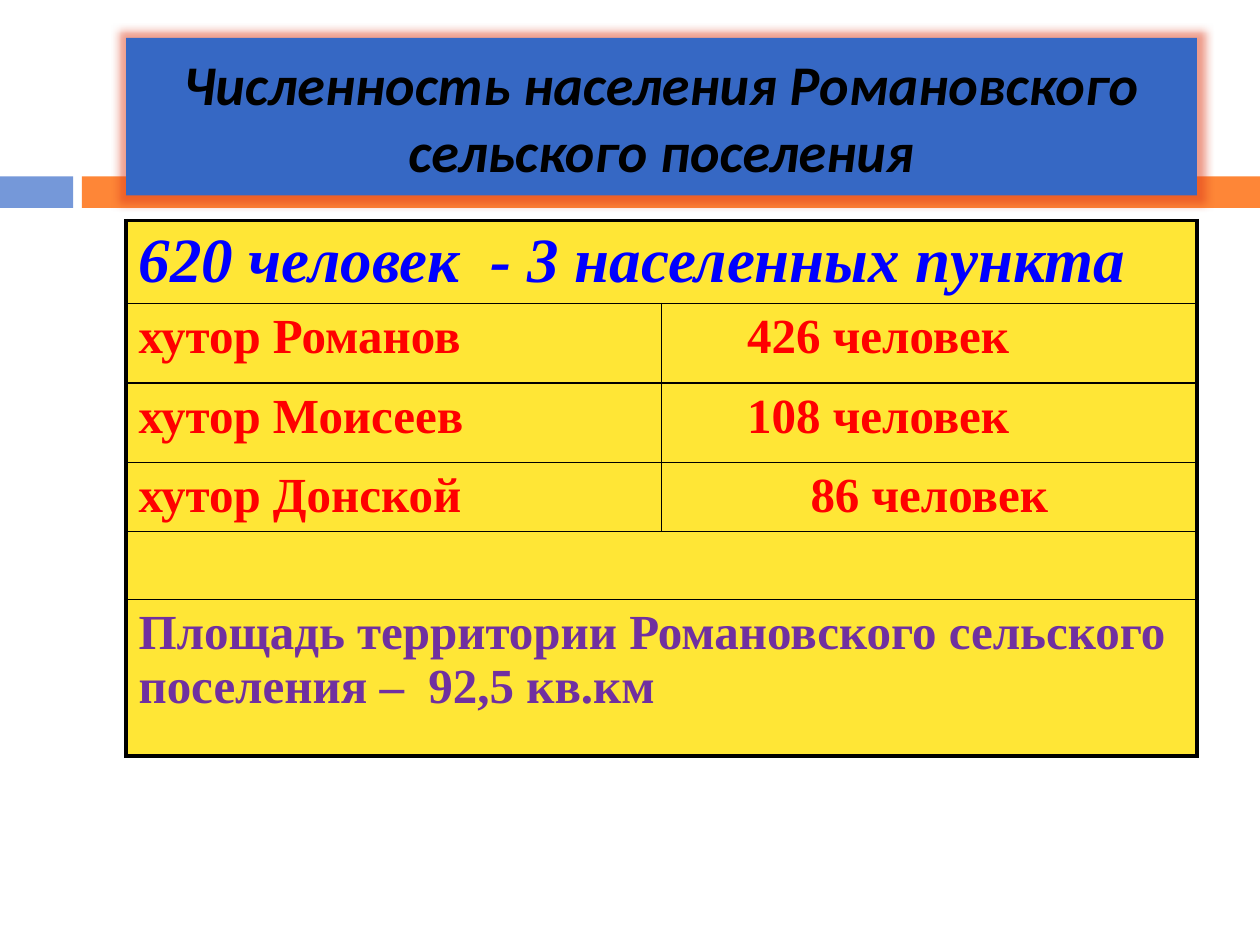
from typing import NamedTuple

from lxml.etree import SubElement
from pptx import Presentation
from pptx.dml.color import RGBColor
from pptx.enum.shapes import MSO_SHAPE
from pptx.enum.text import MSO_ANCHOR, MSO_AUTO_SIZE, PP_ALIGN
from pptx.oxml import parse_xml
from pptx.oxml.ns import nsdecls, qn
from pptx.util import Inches, Pt

COLORS = {
    "blue_band": "7598D9",
    "orange_band": "FE8637",
    "title_fill": "3668C4",
    "glow": "DD3B1A",
    "cell": "FFE636",
    "black": "000000",
    "total": "0000FF",
    "village": "FF0000",
    "area": "7030A0",
}
OUTER, INNER = 2.25, 1
COLUMN_WIDTH = 4.25
MARGIN = 0.1
COUNT_INDENT = 0.58


class Band(NamedTuple):
    left: float
    width: float
    color: str


class Entry(NamedTuple):
    text: str
    color: str = "village"
    size: int = 28
    italic: bool = False
    indent: float = 0
    align: PP_ALIGN = PP_ALIGN.LEFT


class Row(NamedTuple):
    height: float
    entries: list[Entry]


BANDS = [Band(0, 0.58, "blue_band"), Band(0.65, 9.35, "orange_band")]
ROWS = [
    Row(0.66, [Entry("620 человек  - 3 населенных пункта", "total", 36, True)]),
    Row(0.63, [Entry("хутор Романов"), Entry("426 человек", indent=COUNT_INDENT)]),
    Row(0.63, [Entry("хутор Моисеев"), Entry("108 человек", indent=COUNT_INDENT)]),
    Row(0.55, [Entry("хутор Донской"), Entry("86 человек", align=PP_ALIGN.CENTER)]),
    Row(0.54, [Entry("")]),
    Row(1.24, [Entry("Площадь территории Романовского сельского поселения –  92,5 кв.км", "area")]),
]


def rgb(name: str) -> RGBColor:
    return RGBColor.from_string(COLORS[name])


def paint(target, color: str) -> None:
    target.fill.solid()
    target.fill.fore_color.rgb = rgb(color)


def add_span(para, text: str, font: str, size: int, color: str, italic: bool) -> None:
    span = para.add_run()
    span.text = text
    span.font.name = font
    span.font.size = Pt(size)
    span.font.bold = True
    span.font.italic = italic
    span.font.color.rgb = rgb(color)


def add_band(page, band: Band):
    box = page.shapes.add_shape(
        MSO_SHAPE.RECTANGLE, Inches(band.left), Inches(1.4), Inches(band.width), Inches(0.25)
    )
    box.shadow.inherit = False
    paint(box, band.color)
    box.line.fill.background()
    return box


def format_title(title) -> None:
    title.left, title.top = Inches(1), Inches(0.3)
    title.width, title.height = Inches(8.5), Inches(1.25)
    paint(title, "title_fill")
    title.element.spPr.append(parse_xml(
        f'<a:effectLst {nsdecls("a")}><a:glow rad="{Inches(0.14)}">'
        f'<a:srgbClr val="{COLORS["glow"]}"><a:alpha val="50000"/></a:srgbClr>'
        "</a:glow></a:effectLst>"
    ))
    frame = title.text_frame
    frame.word_wrap = True
    frame.auto_size = MSO_AUTO_SIZE.NONE
    frame.vertical_anchor = MSO_ANCHOR.MIDDLE
    para = frame.paragraphs[0]
    para.alignment = PP_ALIGN.CENTER
    add_span(para, "Численность населения Романовского сельского поселения", "Calibri", 32, "black", True)


def set_borders(cell, widths: dict[str, float]) -> None:
    properties = cell._tc.get_or_add_tcPr()
    for index, (side, width) in enumerate(widths.items()):
        line = SubElement(properties, qn(f"a:ln{side}"), w=str(Pt(width)))
        fill = SubElement(line, qn("a:solidFill"))
        SubElement(fill, qn("a:srgbClr"), val=COLORS["black"])
        properties.insert(index, line)


def fill_cell(cell, entry: Entry) -> None:
    paint(cell, "cell")
    cell.margin_left = Inches(MARGIN + entry.indent)
    if entry.text:
        para = cell.text_frame.paragraphs[0]
        para.alignment = entry.align
        add_span(para, entry.text, "Times New Roman", entry.size, entry.color, entry.italic)


def add_population_table(page, rows: list[Row]) -> None:
    total_height = sum(row.height for row in rows)
    frame = page.shapes.add_table(
        len(rows), 2, Inches(1), Inches(1.75), Inches(2 * COLUMN_WIDTH), Inches(total_height)
    )
    table = frame.table
    table.first_row = table.horz_banding = False
    for row_index, row in enumerate(rows):
        table.rows[row_index].height = Inches(row.height)
        left, right = table.cell(row_index, 0), table.cell(row_index, 1)
        merged = len(row.entries) == 1
        if merged:
            left.merge(right)
        for cell, entry in zip((left, right), row.entries):
            fill_cell(cell, entry)
        top = OUTER if row_index == 0 else INNER
        bottom = OUTER if row_index == len(rows) - 1 else INNER
        set_borders(left, {"L": OUTER, "R": OUTER if merged else INNER, "T": top, "B": bottom})
        set_borders(right, {"L": INNER, "R": OUTER, "T": top, "B": bottom})


def main() -> None:
    deck = Presentation()
    deck.slide_width, deck.slide_height = Inches(10), Inches(7.5)
    page = deck.slides.add_slide(deck.slide_layouts[5])
    title = page.shapes.title
    for band in BANDS:
        title.element.addprevious(add_band(page, band).element)
    format_title(title)
    add_population_table(page, ROWS)
    deck.save("out.pptx")


if __name__ == "__main__":
    main()
